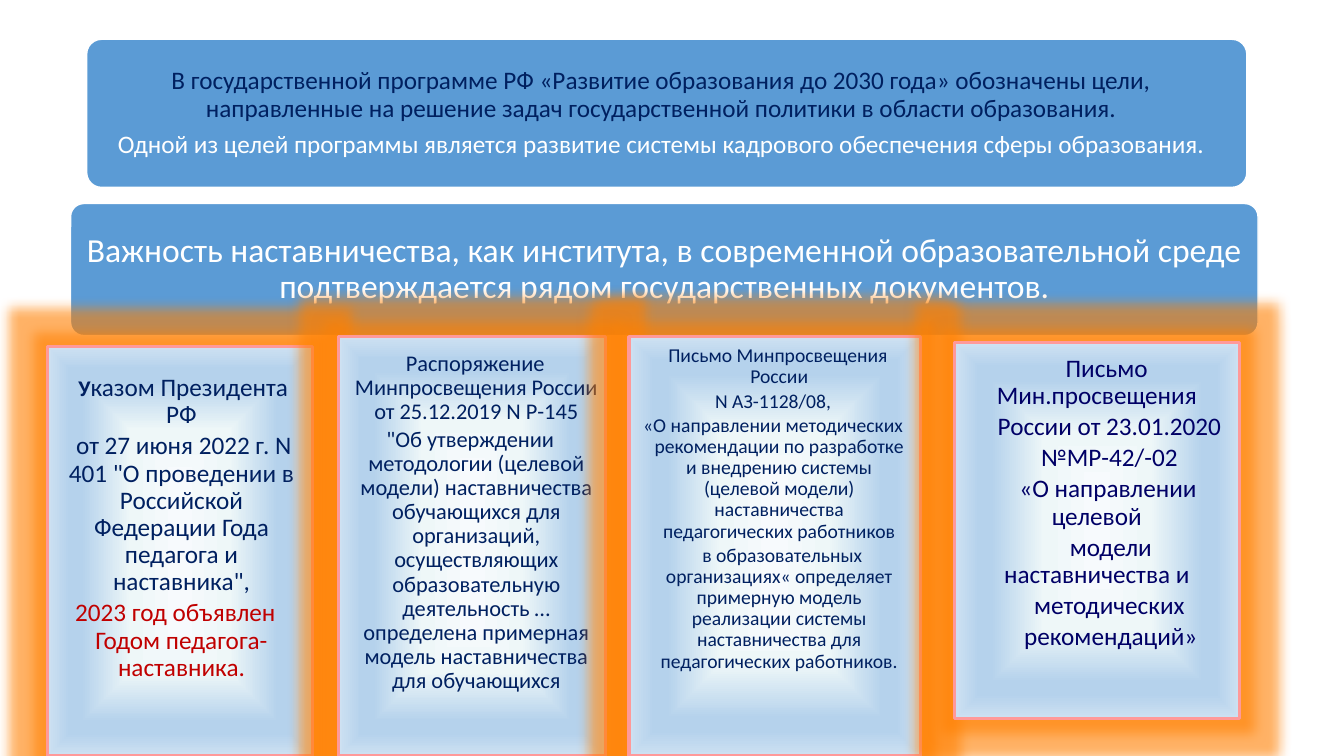
import pptx
import pptx.dml.color
import pptx.enum.shapes
import pptx.enum.text
import pptx.oxml
import pptx.util
from pptx.oxml.ns import nsdecls, qn

Pt = pptx.util.Pt

COLOURS = {
    "white": "FFFFFF", "blue": "5B9BD5", "navy": "002060", "indigo": "000066",
    "red": "C00000", "pink": "FF9999", "glow": "FF8000",
}
# Stops run from the centre of a card to its edge
CARD_STOPS = [(0, "F7FAFD"), (37, "EEF7F8"), (74, "B5D2EC"), (83, "B5D2EC"), (100, "CEE1F2")]
CARD_INSETS = (6.5, 6.5, 8.6, 9.4)
HANGING = 8.64


def colour(name):
    return pptx.dml.color.RGBColor.from_string(COLOURS[name])


class SlideBuilder:
    """Holds the style and the current slide."""

    font_name = "Calibri"
    line_spacing = 0.9

    def __init__(self, presentation):
        self.slide = presentation.slides.add_slide(presentation.slide_layouts[6])

    def box(self, kind, bounds, line, width):
        shape = self.slide.shapes.add_shape(kind, *map(Pt, bounds))
        shape.line.color.rgb = colour(line)
        shape.line.width = Pt(width)
        return shape

    def banner(self, bounds):
        shape = self.box(pptx.enum.shapes.MSO_SHAPE.ROUNDED_RECTANGLE, bounds, "white", 1)
        shape.shadow.inherit = False
        shape.adjustments[0] = 0.1
        shape.fill.solid()
        shape.fill.fore_color.rgb = colour("blue")

    def card(self, bounds):
        shape = self.box(pptx.enum.shapes.MSO_SHAPE.RECTANGLE, bounds, "pink", 2.5)
        stops = "".join(
            f'<a:gs pos="{position * 1000}"><a:srgbClr val="{value}"/></a:gs>'
            for position, value in CARD_STOPS)
        gradient = pptx.oxml.parse_xml(
            f'<a:gradFill {nsdecls("a")} rotWithShape="1"><a:gsLst>{stops}</a:gsLst>'
            '<a:path path="shape"><a:fillToRect l="50000" t="50000" r="50000" b="50000"/>'
            '</a:path></a:gradFill>')
        glow = pptx.oxml.parse_xml(
            f'<a:effectLst {nsdecls("a")}><a:glow rad="{Pt(18)}">'
            f'<a:srgbClr val="{COLOURS["glow"]}"><a:alpha val="60000"/></a:srgbClr>'
            '</a:glow></a:effectLst>')
        properties = shape._element.spPr
        properties.find(qn("a:prstGeom")).addnext(gradient)
        properties.find(qn("a:ln")).addnext(glow)

    def text(self, bounds, paragraphs, insets, after, middle=False):
        """Each paragraph is (left margin, start of the first line, runs)."""
        frame = self.slide.shapes.add_textbox(*map(Pt, bounds)).text_frame
        anchor = pptx.enum.text.MSO_ANCHOR
        left, top, right, bottom = map(Pt, insets)
        frame_format = {
            "word_wrap": True,
            "vertical_anchor": anchor.MIDDLE if middle else anchor.TOP,
            "margin_left": left, "margin_top": top,
            "margin_right": right, "margin_bottom": bottom,
        }
        for name, value in frame_format.items():
            setattr(frame, name, value)
        for index, (margin, start, runs) in enumerate(paragraphs):
            paragraph = frame.add_paragraph() if index else frame.paragraphs[0]
            paragraph_format = {
                "alignment": pptx.enum.text.PP_ALIGN.CENTER,
                "line_spacing": self.line_spacing,
                "space_after": Pt(after * runs[-1][1]),
            }
            for name, value in paragraph_format.items():
                setattr(paragraph, name, value)
            properties = paragraph._p.get_or_add_pPr()
            properties.set("marL", str(Pt(margin)))
            properties.set("indent", str(Pt(start - margin)))
            for words, size, shade, bold in runs:
                run = paragraph.add_run()
                run.text = words
                run_format = {"name": self.font_name, "size": Pt(size), "bold": bold}
                for name, value in run_format.items():
                    setattr(run.font, name, value)
                run.font.color.rgb = colour(shade)


def line(words, size, shade, start=0, margin=HANGING):
    return margin, start, [(words, size, shade, False)]


BANNERS = [
    ((50.4, 145.4, 848.2, 94.3), (3.6, 2.2, 3.6, 2.2), [
        line("Важность наставничества, как института, в современной образовательной среде "
             "подтверждается рядом государственных документов.", 24, "white", margin=0),
    ]),
    ((61.9, 28.1, 828.7, 105.8), (14, 2.2, 22, 2.2), [
        line("В государственной программе РФ «Развитие образования до 2030 года» обозначены "
             "цели, направленные на решение задач государственной политики в области "
             "образования.", 18, "navy", margin=0),
        line("Одной из целей программы является развитие системы кадрового обеспечения "
             "сферы образования.", 18, "white", margin=0),
    ]),
]

# Card bounds, text bounds, extra space above the text, paragraphs
CARDS = [
    ((33.8, 247.7, 189.4, 292.3), (31.7, 242.6, 189.4, 292.3), 18.7, [
        (HANGING, 11, [("У", 16, "navy", True), ("казом Президента РФ", 18, "navy", False)]),
        line("от 27 июня 2022 г. N 401 \"О проведении в Российской Федерации Года "
             "педагога и наставника\",", 18, "navy", 12),
        line("2023 год объявлен Годом педагога-наставника.", 18, "red"),
    ]),
    ((241.9, 240.5, 190.8, 299.5), (236.2, 244.8, 201.6, 284.4), 0, [
        line("Распоряжение Минпросвещения России от 25.12.2019 N Р-145", 16, "navy", 7),
        line("\"Об утверждении методологии (целевой модели) наставничества обучающихся для "
             "организаций, осуществляющих образовательную деятельность … определена "
             "примерная модель наставничества для обучающихся", 16, "navy"),
    ]),
    ((449.3, 240.5, 208.1, 299.5), (449.3, 240.5, 208.1, 299.5), 0, [
        line("Письмо Минпросвещения России", 14, "navy", 7),
        line("N АЗ-1128/08,", 14, "navy"),
        line("«О направлении методических рекомендации по разработке и внедрению системы "
             "(целевой модели) наставничества педагогических работников", 14, "navy"),
        line("в образовательных организациях« определяет примерную модель реализации "
             "системы наставничества для педагогических работников.", 14, "navy", 13),
    ]),
    ((681.8, 244.8, 203.8, 268.6), (682.6, 247.7, 203.8, 268.6), 0, [
        line("Письмо Мин.просвещения", 18, "indigo", 14, 0),
        line("России от 23.01.2020", 18, "indigo", 18),
        line("№МР-42/-02", 18, "indigo", 18),
        line("«О направлении целевой", 18, "indigo", 16, 0),
        line("модели наставничества и", 18, "indigo", 20, 0),
        line("методических", 18, "indigo", 18),
        line("рекомендаций»", 18, "indigo", 20),
    ]),
]


def main():
    presentation = pptx.Presentation()
    presentation.slide_width = Pt(960)
    presentation.slide_height = Pt(540)
    builder = SlideBuilder(presentation)

    # Banners with the programme goals
    for bounds, insets, paragraphs in BANNERS:
        builder.banner(bounds)
        builder.text(bounds, paragraphs, insets, 0.35, middle=True)

    # Cards with the state documents
    left, top, right, bottom = CARD_INSETS
    for bounds, text_bounds, space_above, paragraphs in CARDS:
        builder.card(bounds)
        insets = (left, top + space_above, right, bottom)
        builder.text(text_bounds, paragraphs, insets, 0.15)

    presentation.save("out.pptx")


if __name__ == "__main__":
    main()
